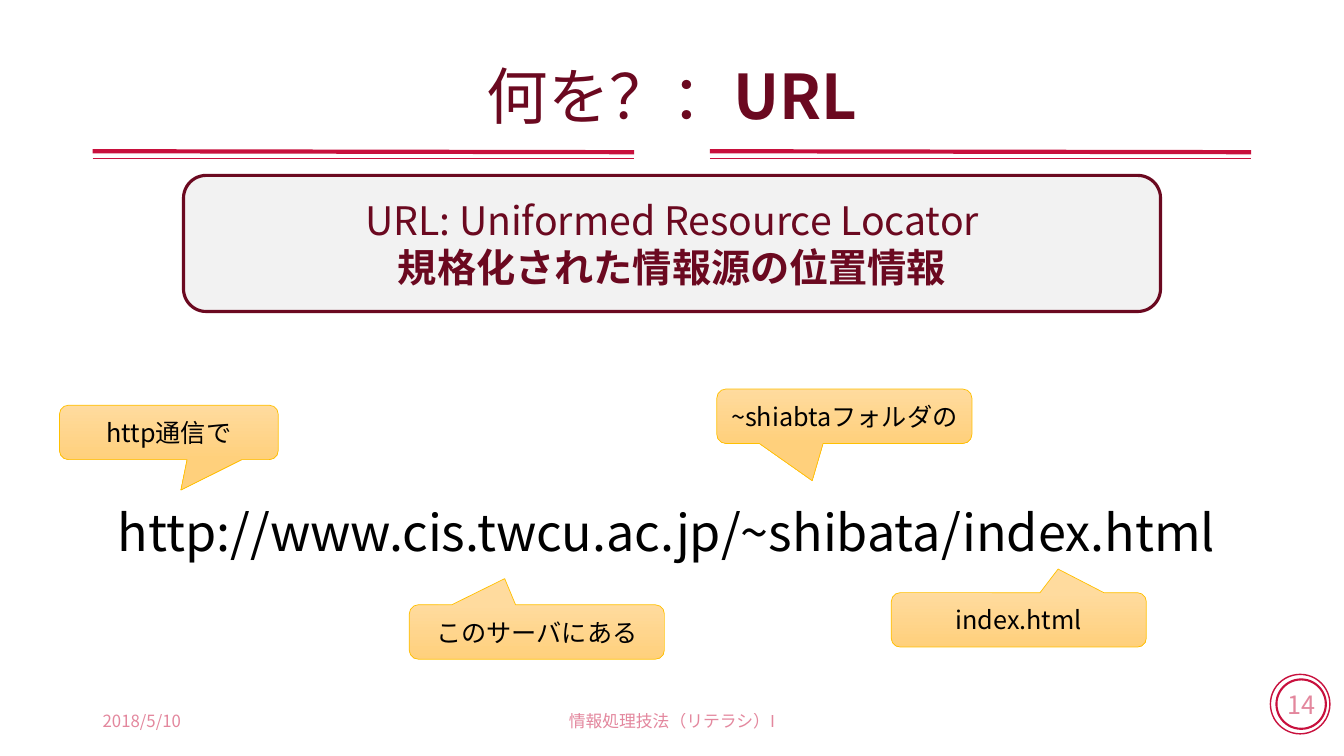
from lxml.etree import SubElement
from pptx import Presentation
from pptx.dml.color import RGBColor as RGB
from pptx.enum.shapes import MSO_CONNECTOR as Link, MSO_SHAPE as Preset
from pptx.enum.text import MSO_ANCHOR as Anchor, MSO_AUTO_SIZE as Fit, PP_ALIGN as Align
from pptx.oxml.ns import qn
from pptx.util import Inches, Pt

FONT = "Noto Sans CJK JP"
COLORS = {
    "crimson": "C8103D", "wine": "6B0920", "panel": "F2F2F2", "black": "000000",
    "gold": "FFC000", "light": "FFDB9E", "amber": "FFD07C",
}
WIDTH, HEIGHT = 13.33, 7.5
MARGIN = 0.92
CONTENT = WIDTH - 2 * MARGIN


def color(name):
    return RGB.from_string(COLORS[name])


def write(shape, *lines, size, ink, align=Align.CENTER, anchor=Anchor.MIDDLE,
          wrap=True, alpha=None, spacing=None):
    frame = shape.text_frame
    frame.word_wrap = wrap
    frame.vertical_anchor = anchor
    for index, line in enumerate(lines):
        paragraph = frame.add_paragraph() if index else frame.paragraphs[0]
        paragraph.alignment = align
        paragraph.line_spacing = spacing
        for words, bold in line:
            run = paragraph.add_run()
            run.text = words
            run.font.size = Pt(size)
            run.font.bold = bold
            run.font.color.rgb = color(ink)
            run.font.name = FONT
            props = run.font._element
            SubElement(props, qn("a:ea"), typeface=FONT)
            if alpha:
                SubElement(props.find(".//" + qn("a:srgbClr")), qn("a:alpha"), val=str(alpha * 1000))


deck = Presentation()
deck.slide_width, deck.slide_height = Inches(WIDTH), Inches(HEIGHT)
slide = deck.slides.add_slide(deck.slide_layouts[5])
shapes = slide.shapes

for left, top, diameter, weight in [(12.6, 6.69, 0.59, 1), (12.66, 6.74, 0.49, 1.5)]:
    ring = shapes.add_shape(Preset.OVAL, *map(Inches, (left, top, diameter, diameter)))
    ring.shadow.inherit = False
    ring.fill.background()
    ring.line.color.rgb = color("crimson")
    ring.line.width = Pt(weight)
write(ring, [("14", False)], size=18, ink="crimson", wrap=False, alpha=50)

RULE = 5.37
for left in (WIDTH - MARGIN - RULE, MARGIN):
    for top, drop, weight in [(1.5, 0.01, 3), (1.57, 0, 1)]:
        rule = shapes.add_connector(
            Link.STRAIGHT, *map(Inches, (left, top, left + RULE, top + drop)))
        rule.line.color.rgb = color("crimson")
        rule.line.width = Pt(weight)
        SubElement(rule._element.spPr, qn("a:effectLst"))

title = shapes.title
title.left, title.top, title.width, title.height = map(Inches, (MARGIN, 0.4, CONTENT, 1.17))
write(title, [("何を？：", False), ("URL", True)], size=44, ink="wine", spacing=0.9)

for left, width, words, align in [
    (MARGIN, 3, "2018/5/10", Align.LEFT),
    ((WIDTH - 4.5) / 2, 4.5, "情報処理技法（リテラシ）I", Align.CENTER),
]:
    footer = shapes.add_textbox(*map(Inches, (left, 6.95, width, 0.4)))
    write(footer, [(words, False)], size=12, ink="crimson", align=align, alpha=50)

PANEL = 9.69
definition = shapes.add_shape(
    Preset.ROUNDED_RECTANGLE, *map(Inches, ((WIDTH - PANEL) / 2, 1.74, PANEL, 1.35)))
definition.shadow.inherit = False
definition.fill.solid()
definition.fill.fore_color.rgb = color("panel")
definition.line.color.rgb = color("wine")
definition.line.width = Pt(2.25)
write(definition, [("URL: Uniformed Resource Locator", False)],
      [("規格化された情報源の位置情報", True)], size=28, ink="wine")

address = shapes.add_textbox(*map(Inches, (1.07, 4.92, 11.2, 0.71)))
write(address, [("http://www.cis.twcu.ac.jp/~shibata/index.html", False)], size=36,
      ink="black", align=Align.LEFT, anchor=Anchor.TOP, wrap=False)
address.text_frame.auto_size = Fit.SHAPE_TO_FIT_TEXT

for left, top, width, tip_x, tip_y, words in [
    (0.59, 4.02, 2.17, 0.055, 1.059, "http通信で"),
    (4.06, 6, 2.53, -0.126, -0.98, "このサーバにある"),
    (7.11, 3.86, 2.53, -0.126, 1.183, "~shiabtaフォルダの"),
    (8.84, 5.88, 2.53, 0.154, -0.934, "index.html"),
]:
    callout = shapes.add_shape(
        Preset.ROUNDED_RECTANGULAR_CALLOUT, *map(Inches, (left, top, width, 0.54)))
    callout.shadow.inherit = False
    callout.adjustments[0], callout.adjustments[1] = tip_x, tip_y
    callout.fill.gradient()
    callout.fill.gradient_angle = 270
    for stop, shade in zip(callout.fill.gradient_stops, ("light", "amber")):
        stop.color.rgb = color(shade)
    callout.line.color.rgb = color("gold")
    callout.line.width = Pt(0.5)
    write(callout, [(words, False)], size=18, ink="black")

deck.save("out.pptx")
